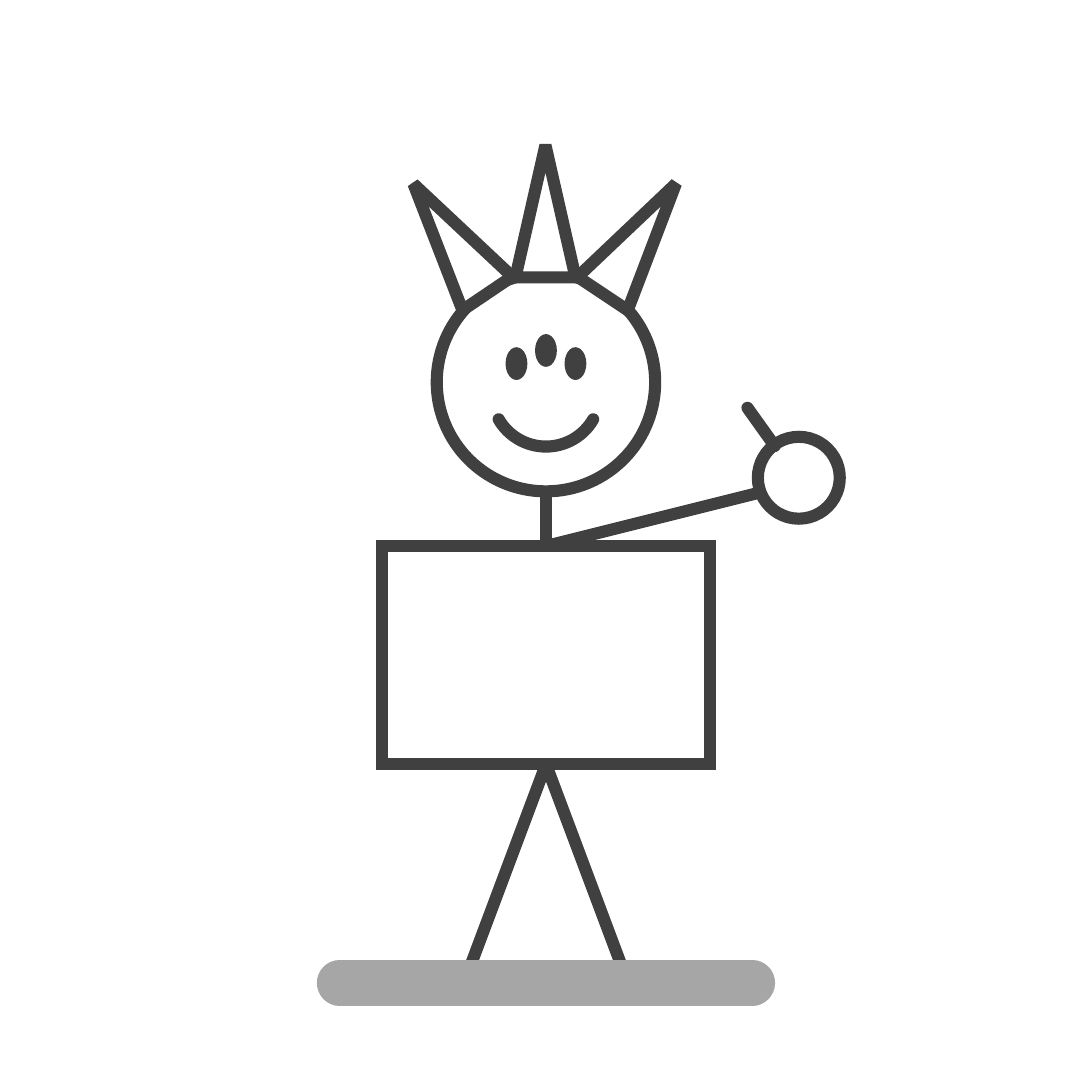
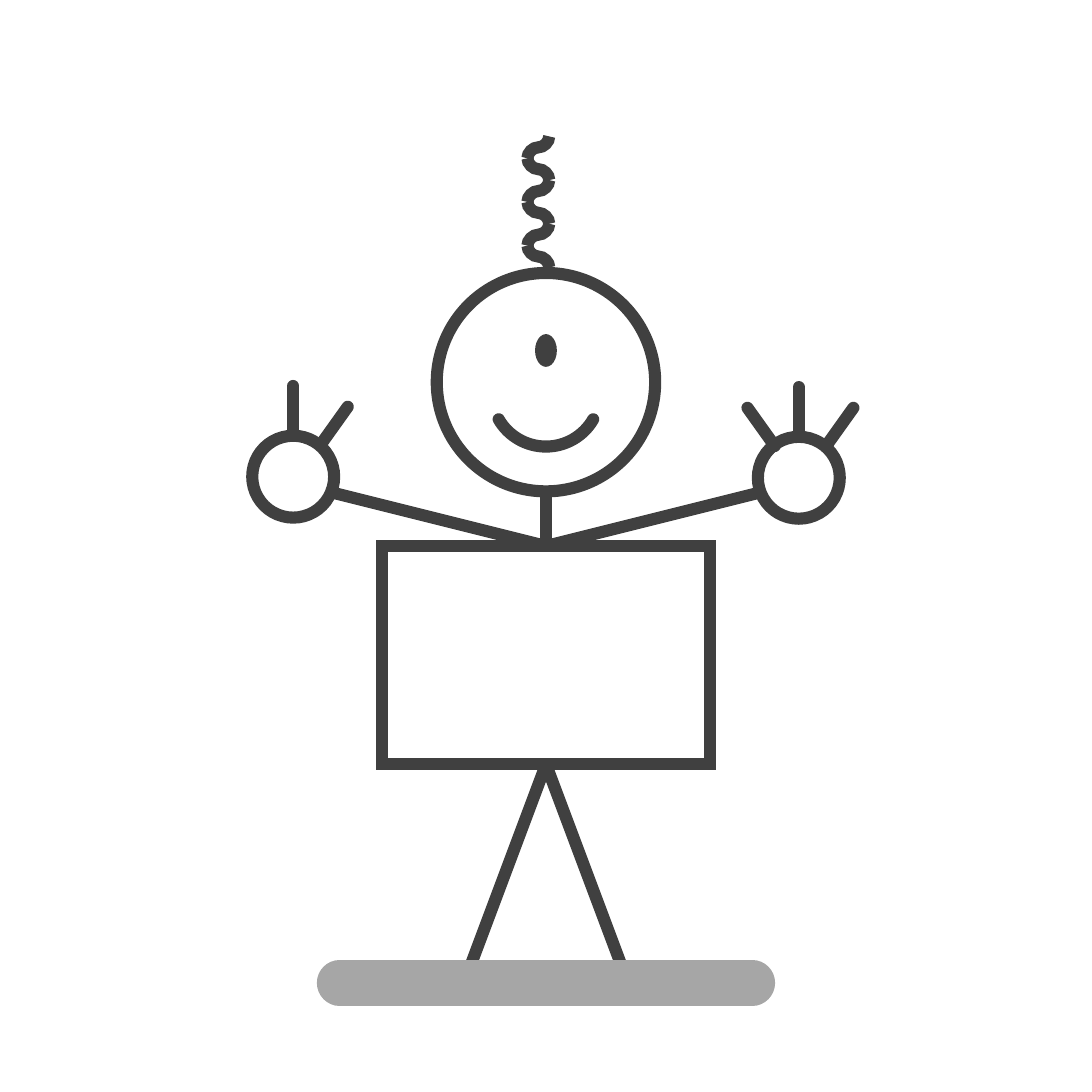
from pptx import Presentation
from pptx.dml.color import RGBColor
from pptx.enum.shapes import MSO_CONNECTOR, MSO_SHAPE
from pptx.oxml.ns import qn
from pptx.oxml.xmlchemy import OxmlElement
from pptx.util import Cm, Pt

STRAIGHT, CURVE = MSO_CONNECTOR.STRAIGHT, MSO_CONNECTOR.CURVE
OVAL, RECTANGLE = MSO_SHAPE.OVAL, MSO_SHAPE.RECTANGLE
TRIANGLE, ARC = MSO_SHAPE.ISOSCELES_TRIANGLE, MSO_SHAPE.ARC

INK = RGBColor(0x40, 0x40, 0x40)
PAPER = RGBColor(0xFF, 0xFF, 0xFF)
GROUND = RGBColor(0xA6, 0xA6, 0xA6)

UNIT_CM = 2.54
PAGE_SIDE = 10
STROKE, GROUND_STROKE = 8, 30
SHOULDER, HIP = (5, 5), (5, 7)
HAND_SIZE = 0.75
EYE_SIZE = (0.2, 0.3)
MIDDLE_EYE = (4.9, 3.06)
SIDE_EYES = [(4.63, 3.18), (5.17, 3.18)]
SPIKE_SIZE = (0.55, 1.21)
SPIKES = [(5.58, 1.58, 33.7), (4.72, 1.33, 0), (3.85, 1.58, 326)]
FINGERS = {
    "left": ((-0.22, -0.29), (-0.47, -0.64)),
    "up": ((0, -0.39), (0, -0.83)),
    "right": ((0.25, -0.29), (0.5, -0.64)),
}
CURL_LEFT, CURL_BOTTOM, CURL_SIZE, CURL_COUNT = 4.83, 2.45, 0.2, 6


def units(*values):
    return [Cm(value * UNIT_CM) for value in values]


def style_line(item, color=INK, width=STROKE, round_cap=False):
    item.line.color.rgb = color
    item.line.width = Pt(width)
    outline = item.line._get_or_add_ln()
    outline.set("cap", "rnd" if round_cap else "flat")
    join = OxmlElement("a:miter")
    join.set("lim", "800000")
    outline.append(join)


def add_line(page, start, end, kind=STRAIGHT, **line_format):
    line = page.shapes.add_connector(kind, *units(*start, *end))
    style_line(line, **line_format)
    line._element.spPr.append(OxmlElement("a:effectLst"))
    return line


def add_figure(page, kind, position, size, fill=PAPER, outlined=True, round_cap=False):
    figure = page.shapes.add_shape(kind, *units(*position, *size))
    figure.shadow.inherit = False
    if fill is None:
        figure.fill.background()
    else:
        figure.fill.solid()
        figure.fill.fore_color.rgb = fill
    if outlined:
        style_line(figure, round_cap=round_cap)
    else:
        figure.line.fill.background()
    return figure


def add_eyes(page, positions):
    for position in positions:
        add_figure(page, OVAL, position, EYE_SIZE, fill=INK, outlined=False)


def add_head(page, eyes):
    add_figure(page, OVAL, (4, 2.5), (2, 2))
    add_eyes(page, eyes)
    mouth = add_figure(page, ARC, (4.5, 3.09), (1, 1), fill=None, round_cap=True)
    mouth.adjustments[0] = 18.02
    mouth.adjustments[1] = 90


def add_arm(page, wrist, hand, fingers):
    add_line(page, SHOULDER, wrist)
    add_figure(page, OVAL, hand, (HAND_SIZE, HAND_SIZE))
    center = [edge + HAND_SIZE / 2 for edge in hand]
    for name in fingers:
        start, end = [
            [middle + shift for middle, shift in zip(center, point)]
            for point in FINGERS[name]
        ]
        add_line(page, start, end, round_cap=True)


def add_spikes(page):
    for left, top, angle in SPIKES:
        spike = add_figure(page, TRIANGLE, (left, top), SPIKE_SIZE)
        spike.rotation = angle


def add_curl(page):
    right = CURL_LEFT + CURL_SIZE
    for index in range(CURL_COUNT):
        bottom = CURL_BOTTOM - index * CURL_SIZE
        top = bottom - CURL_SIZE
        if index % 2:
            start, end, angle = (right, bottom), (CURL_LEFT, top), 90
        else:
            start, end, angle = (CURL_LEFT, bottom), (right, top), 270
        bend = add_line(page, start, end, kind=CURVE)
        bend._element.spPr.find(qn("a:xfrm")).set("rot", str(angle * 60000))


def add_robot(deck, eyes, arms, add_hair):
    page = deck.slides.add_slide(deck.slide_layouts[6])
    add_line(page, (5, 4.5), SHOULDER)
    for foot in (4.25, 5.75):
        add_line(page, HIP, (foot, 9))
    for arm in arms:
        add_arm(page, *arm)
    add_head(page, eyes)
    add_hair(page)
    add_figure(page, RECTANGLE, (3.5, 5), (3, 2))
    add_line(page, (3.11, 9), (6.89, 9), color=GROUND, width=GROUND_STROKE, round_cap=True)


def main():
    deck = Presentation()
    deck.slide_width, deck.slide_height = units(PAGE_SIDE, PAGE_SIDE)
    right_wrist, right_hand = (7, 4.5), (6.94, 4)
    left_wrist, left_hand = (3, 4.5), (2.31, 3.99)
    add_robot(
        deck,
        eyes=[*SIDE_EYES, MIDDLE_EYE],
        arms=[(right_wrist, right_hand, ["left"])],
        add_hair=add_spikes,
    )
    add_robot(
        deck,
        eyes=[MIDDLE_EYE],
        arms=[
            (right_wrist, right_hand, ["left", "up", "right"]),
            (left_wrist, left_hand, ["up", "right"]),
        ],
        add_hair=add_curl,
    )
    deck.save("out.pptx")


if __name__ == "__main__":
    main()
